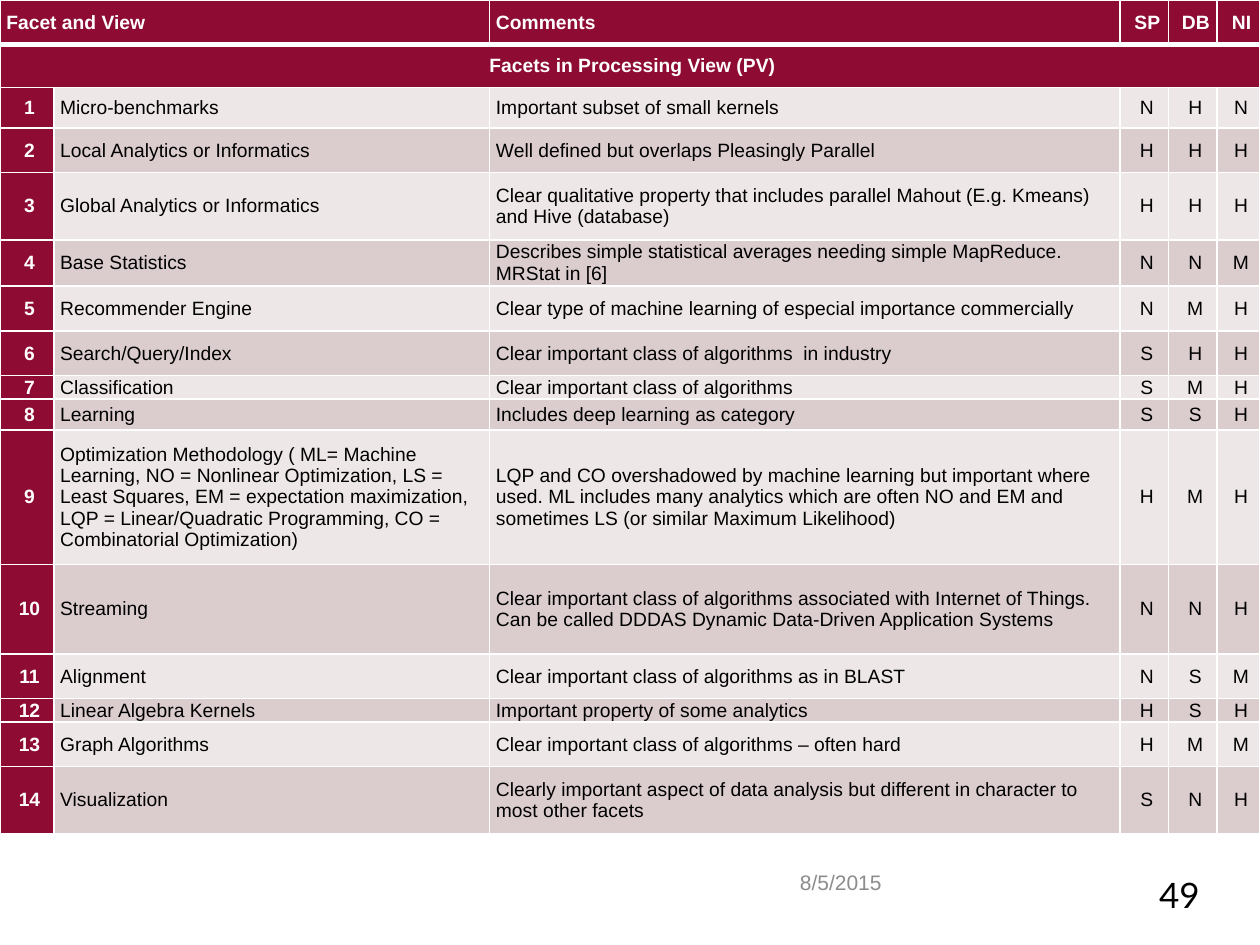
from lxml.etree import SubElement
from pptx import Presentation
from pptx.dml.color import RGBColor
from pptx.enum.text import MSO_ANCHOR, PP_ALIGN
from pptx.oxml.ns import qn
from pptx.util import Pt

MAROON = RGBColor(0x8E, 0x0C, 0x33)
LIGHT = RGBColor(0xEE, 0xE7, 0xE8)
DARK = RGBColor(0xDB, 0xCC, 0xCE)
WHITE = RGBColor(0xFF, 0xFF, 0xFF)
BLACK = RGBColor(0x00, 0x00, 0x00)
GRAY = RGBColor(0x8C, 0x8C, 0x8C)

COLUMN_WIDTHS = [30.8, 249, 360.2, 27.7, 27.7, 24.6]
HEADER_HEIGHTS = [25.6, 24.5]
HEADER = ["Facet and View", "", "Comments", "SP", "DB", "NI"]
SECTION = ["Facets in Processing View (PV)", "", "", "", "", ""]
FACETS = [
    (23, "Micro-benchmarks", "Important subset of small kernels", "NHN"),
    (25.6, "Local Analytics or Informatics",
     "Well defined but overlaps Pleasingly Parallel", "HHH"),
    (38.4, "Global Analytics or Informatics",
     "Clear qualitative property that includes parallel Mahout (E.g. Kmeans) and Hive (database)",
     "HHH"),
    (25.6, "Base Statistics",
     "Describes simple statistical averages needing simple MapReduce. MRStat in [6]", "NNM"),
    (25.6, "Recommender Engine",
     "Clear type of machine learning of especial importance commercially", "NMH"),
    (25.6, "Search/Query/Index", "Clear important class of algorithms  in industry", "SHH"),
    (12.8, "Classification", "Clear important class of algorithms", "SMH"),
    (17.8, "Learning", "Includes deep learning as category", "SSH"),
    (76.8, "Optimization Methodology ( ML= Machine Learning, NO = Nonlinear Optimization, "
     "LS = Least Squares, EM = expectation maximization, LQP = Linear/Quadratic Programming, "
     "CO = Combinatorial Optimization)",
     "LQP and CO overshadowed by machine learning but important where used. ML includes many "
     "analytics which are often NO and EM and sometimes LS (or similar Maximum Likelihood)",
     "HMH"),
    (51.2, "Streaming",
     "Clear important class of algorithms associated with Internet of Things. "
     "Can be called DDDAS Dynamic Data-Driven Application Systems", "NNH"),
    (25.6, "Alignment", "Clear important class of algorithms as in BLAST", "NSM"),
    (12.8, "Linear Algebra Kernels", "Important property of some analytics", "HSH"),
    (25.6, "Graph Algorithms", "Clear important class of algorithms – often hard", "HMM"),
    (38.4, "Visualization",
     "Clearly important aspect of data analysis but different in character to most other facets",
     "SNH"),
]


def apply_format(target, values):
    for name, value in values.items():
        setattr(target, name, value)


def write_text(frame, text, color, align=PP_ALIGN.LEFT, **font):
    para = frame.paragraphs[0]
    para.alignment = align
    span = para.add_run()
    span.text = text
    apply_format(span.font, font)
    span.font.color.rgb = color


def add_borders(cell, widths):
    properties = cell._tc.get_or_add_tcPr()
    for side, width in widths.items():
        line = SubElement(properties, qn(f"a:ln{side}"), w=str(Pt(width)))
        fill = SubElement(line, qn("a:solidFill"))
        SubElement(fill, qn("a:srgbClr"), val=str(WHITE))


def format_cell(cell, row, column, text):
    heading = row < 2 or column == 0
    centered = row == 1 or column > 2 or (row > 1 and column == 0)
    add_borders(cell, {"L": 1, "R": 1, "T": 3 if row == 1 else 1, "B": 3 if row == 0 else 1})
    apply_format(cell, {
        "vertical_anchor": MSO_ANCHOR.MIDDLE,
        "margin_left": Pt(3.6),
        "margin_right": Pt(0 if row == 0 and column > 2 else 0.7),
        "margin_top": 0,
        "margin_bottom": 0,
    })
    cell.fill.solid()
    cell.fill.fore_color.rgb = MAROON if heading else (DARK if row % 2 else LIGHT)
    if text:
        write_text(cell.text_frame, text, WHITE if heading else BLACK,
                   PP_ALIGN.CENTER if centered else PP_ALIGN.LEFT,
                   size=Pt(11), name="Arial", bold=heading)


def add_facet_table(page, left, top):
    heights = HEADER_HEIGHTS + [facet[0] for facet in FACETS]
    rows = [HEADER, SECTION]
    for number, (_, view, comment, ratings) in enumerate(FACETS, 1):
        rows.append([str(number), view, comment, *ratings])
    table = page.shapes.add_table(len(rows), len(COLUMN_WIDTHS), Pt(left), Pt(top),
                                  Pt(sum(COLUMN_WIDTHS)), Pt(sum(heights))).table
    apply_format(table, {"first_row": False, "horz_banding": False})
    for column, width in zip(table.columns, COLUMN_WIDTHS):
        column.width = Pt(width)
    for row, height in zip(table.rows, heights):
        row.height = Pt(height)
    for row, texts in enumerate(rows):
        for column, text in enumerate(texts):
            format_cell(table.cell(row, column), row, column, text)
    table.cell(0, 0).merge(table.cell(0, 1))
    table.cell(1, 0).merge(table.cell(1, len(COLUMN_WIDTHS) - 1))


def add_footer_text(page, box, text, color, anchor, **font):
    frame = page.shapes.add_textbox(*map(Pt, box)).text_frame
    apply_format(frame, {"word_wrap": True, "vertical_anchor": anchor})
    write_text(frame, text, color, **font)


def main():
    deck = Presentation()
    apply_format(deck, {"slide_width": Pt(720), "slide_height": Pt(540)})
    page = deck.slides.add_slide(deck.slide_layouts[6])
    add_footer_text(page, (655.2, 495.4, 51.8, 23), "49", BLACK, MSO_ANCHOR.TOP,
                    size=Pt(20), name="Lato")
    add_footer_text(page, (450, 489.6, 162, 28.8), "8/5/2015", GRAY, MSO_ANCHOR.MIDDLE,
                    size=Pt(12), name="Arial")
    add_facet_table(page, 0, 0)
    deck.save("out.pptx")


if __name__ == "__main__":
    main()
